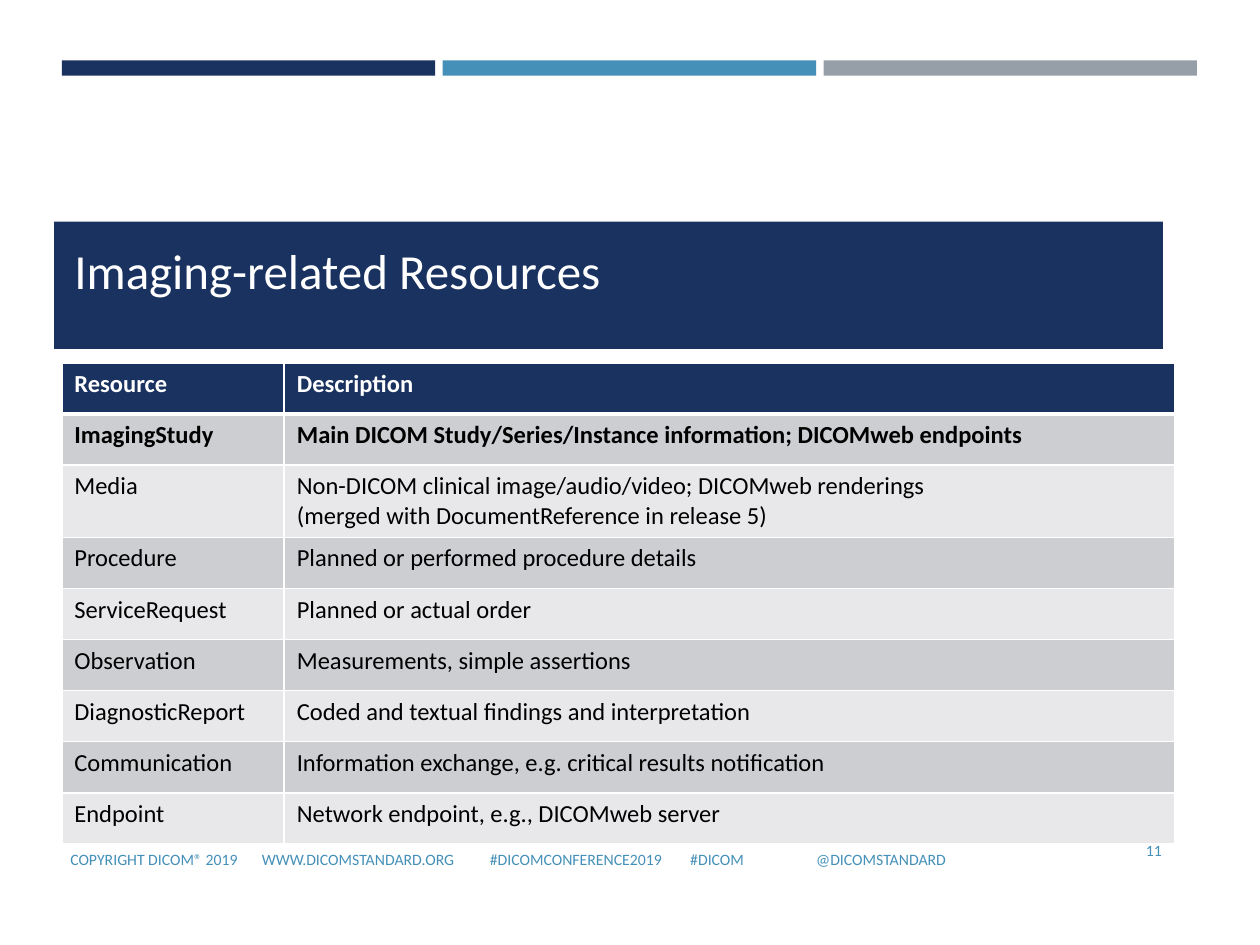
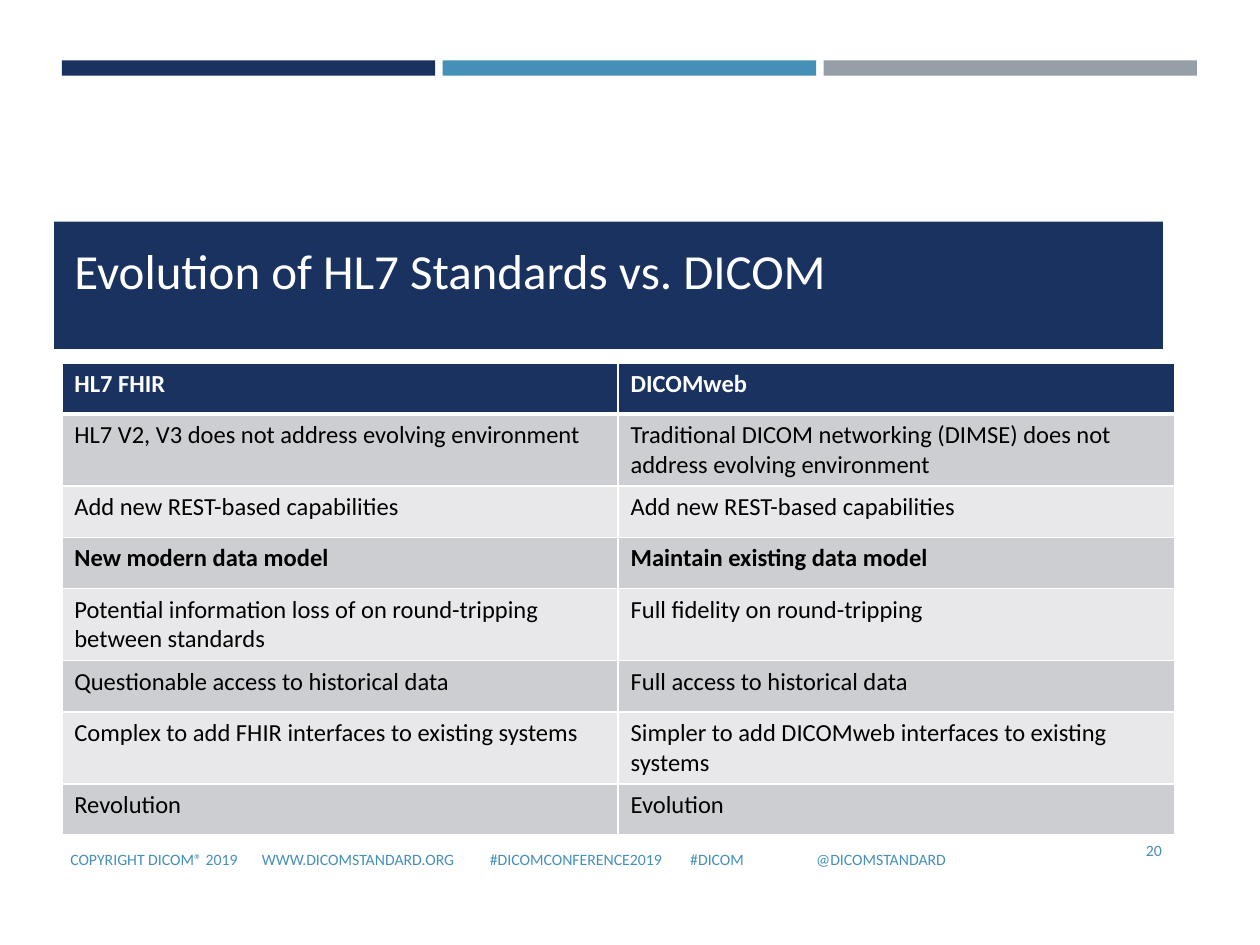
from dataclasses import dataclass

import pptx
import pptx.util
import pptx.dml.color
import pptx.enum.shapes
import pptx.enum.text
import pptx.oxml
import pptx.oxml.ns
from lxml import etree

MSO_ANCHOR = pptx.enum.text.MSO_ANCHOR
PP_ALIGN = pptx.enum.text.PP_ALIGN


@dataclass(frozen=True)
class Theme:
    font: str = "Calibri"
    navy: str = "1A3260"
    blue: str = "4590B8"
    grey: str = "969FA7"
    white: str = "FFFFFF"
    black: str = "000000"
    row_fills: tuple = ("CDCED2", "E8E8EA")
    title_size: int = 28
    table_size: int = 14
    footer_size: int = 9
    rule: int = 1
    header_rule: int = 3


@dataclass(frozen=True)
class Box:
    """A region on a grid of 100 columns by 75 rows."""
    left: float
    top: float
    width: float
    height: float

    def emu(self):
        return [grid(v) for v in (self.left, self.top, self.width, self.height)]


THEME = Theme()
GRID_COLUMNS, GRID_ROWS = 100, 75

STRIPS = Box(4.9, 4.8, 90.1, 1.2)
STRIP_GAP = 0.6
TITLE_BAND = Box(4.3, 17.6, 88, 10.1)
TITLE = Box(4.9, 18.6, 87.4, 9.1)
TABLE = Box(4.9, 28.8, 88.3, 36.5)
TABLE_ROW = pptx.util.Pt(29.2)
FOOTER = Box(4.6, 66.2, 84.6, 3.9)
PAGE_NUMBER = Box(88.9, 65.1, 4.3, 4.7)

FOOTER_ITEMS = ["COPYRIGHT DICOM® 2019", "WWW.DICOMSTANDARD.ORG",
                "#DICOMCONFERENCE2019", "#DICOM", "@DICOMSTANDARD"]
FOOTER_TABS = [15.2, 33.3, 49.2, 59.2]

RESOURCE_ROWS = [
    ("Resource", "Description"),
    ("ImagingStudy",
     "Main DICOM Study/Series/Instance information; DICOMweb endpoints"),
    ("Media", "Non-DICOM clinical image/audio/video; DICOMweb renderings\n"
              "(merged with DocumentReference in release 5)"),
    ("Procedure", "Planned or performed procedure details"),
    ("ServiceRequest", "Planned or actual order"),
    ("Observation", "Measurements, simple assertions"),
    ("DiagnosticReport", "Coded and textual findings and interpretation"),
    ("Communication", "Information exchange, e.g. critical results notification"),
    ("Endpoint", "Network endpoint, e.g., DICOMweb server"),
]

EVOLUTION_ROWS = [
    ("HL7 FHIR", "DICOMweb"),
    ("HL7 V2, V3 does not address evolving environment",
     "Traditional DICOM networking (DIMSE) does not address evolving environment"),
    ("Add new REST-based capabilities", "Add new REST-based capabilities"),
    ("New modern data model", "Maintain existing data model"),
    ("Potential information loss of on round-tripping between standards",
     "Full fidelity on round-tripping"),
    ("Questionable access to historical data", "Full access to historical data"),
    ("Complex to add FHIR interfaces to existing systems",
     "Simpler to add DICOMweb interfaces to existing systems"),
    ("Revolution", "Evolution"),
]


def grid(units):
    return pptx.util.Inches(units / 10)


def rgb(value):
    return pptx.dml.color.RGBColor.from_string(value)


def add_run(p, text, size, color, bold=False):
    r = p.add_run()
    r.text = text
    r.font.name = THEME.font
    r.font.size = pptx.util.Pt(size)
    r.font.bold = bold
    r.font.color.rgb = rgb(color)


def add_rect(s, box, color):
    sp = s.shapes.add_shape(pptx.enum.shapes.MSO_SHAPE.RECTANGLE, *box.emu())
    sp.shadow.inherit = False
    sp.fill.solid()
    sp.fill.fore_color.rgb = rgb(color)
    sp.line.fill.background()


def add_strips(s, box):
    colors = (THEME.navy, THEME.blue, THEME.grey)
    width = (box.width - STRIP_GAP * (len(colors) - 1)) / len(colors)
    for i, color in enumerate(colors):
        left = box.left + i * (width + STRIP_GAP)
        add_rect(s, Box(left, box.top, width, box.height), color)


def add_title(s, box, text):
    add_rect(s, TITLE_BAND, THEME.navy)
    title = s.shapes.title
    s.shapes.element.append(title.element)  # bring in front of the band
    title.left, title.top, title.width, title.height = box.emu()
    tf = title.text_frame
    tf.word_wrap = True
    tf.vertical_anchor = MSO_ANCHOR.TOP
    p = tf.paragraphs[0]
    p.alignment = PP_ALIGN.LEFT
    add_run(p, text, THEME.title_size, THEME.white)


def add_small_text(s, box):
    """Add a middle-anchored text box and return its first paragraph."""
    tf = s.shapes.add_textbox(*box.emu()).text_frame
    tf.word_wrap = True
    tf.vertical_anchor = MSO_ANCHOR.MIDDLE
    return tf.paragraphs[0]


def add_footer(s, number):
    p = add_small_text(s, FOOTER)
    tabs = etree.SubElement(p._p.get_or_add_pPr(), pptx.oxml.ns.qn("a:tabLst"))
    for position in FOOTER_TABS:
        etree.SubElement(tabs, pptx.oxml.ns.qn("a:tab"),
                         pos=str(grid(position)), algn="l")
    for i, item in enumerate(FOOTER_ITEMS):
        add_run(p, "\t" + item if i else item, THEME.footer_size, THEME.blue)

    p = add_small_text(s, PAGE_NUMBER)
    p.alignment = PP_ALIGN.RIGHT
    add_run(p, str(number), THEME.footer_size, THEME.blue)


def set_borders(cell, top, bottom):
    """Draw white cell borders; must run before the cell is filled."""
    tc_pr = cell._tc.get_or_add_tcPr()
    widths = {"lnL": THEME.rule, "lnR": THEME.rule, "lnT": top, "lnB": bottom}
    for tag, width in widths.items():
        ln = etree.SubElement(tc_pr, pptx.oxml.ns.qn("a:" + tag),
                              w=str(pptx.util.Pt(width)))
        fill = etree.SubElement(ln, pptx.oxml.ns.qn("a:solidFill"))
        etree.SubElement(fill, pptx.oxml.ns.qn("a:srgbClr"), val=THEME.white)


def format_cell(cell, text, row, bold):
    header = row == 0
    set_borders(cell,
                top=THEME.header_rule if row == 1 else THEME.rule,
                bottom=THEME.header_rule if header else THEME.rule)
    cell.fill.solid()
    fill = THEME.navy if header else THEME.row_fills[(row - 1) % 2]
    cell.fill.fore_color.rgb = rgb(fill)
    p = cell.text_frame.paragraphs[0]
    for i, line in enumerate(text.split("\n")):
        if i:
            p.add_line_break()
        add_run(p, line, THEME.table_size,
                THEME.white if header else THEME.black, bold)


def add_table(s, box, rows, shares, bold_row):
    left, top, width, _ = box.emu()
    table = s.shapes.add_table(len(rows), len(shares), left, top, width,
                               TABLE_ROW * len(rows)).table
    table.horz_banding = False
    for column, share in zip(table.columns, shares):
        column.width = round(width * share)
    for i, texts in enumerate(rows):
        table.rows[i].height = TABLE_ROW
        for j, text in enumerate(texts):
            format_cell(table.cell(i, j), text, i, bold=i in (0, bold_row))


def add_table_slide(prs, title, rows, shares, bold_row, number):
    s = prs.slides.add_slide(prs.slide_layouts.get_by_name("Title Only"))
    add_strips(s, STRIPS)
    add_title(s, TITLE, title)
    add_table(s, TABLE, rows, shares, bold_row)
    add_footer(s, number)


def main():
    prs = pptx.Presentation()
    prs.slide_width = grid(GRID_COLUMNS)
    prs.slide_height = grid(GRID_ROWS)
    add_table_slide(prs, "Imaging-related Resources", RESOURCE_ROWS,
                    shares=(0.2, 0.8), bold_row=1, number=11)
    add_table_slide(prs, "Evolution of HL7 Standards vs. DICOM", EVOLUTION_ROWS,
                    shares=(0.5, 0.5), bold_row=3, number=20)
    prs.save("out.pptx")


if __name__ == "__main__":
    main()
